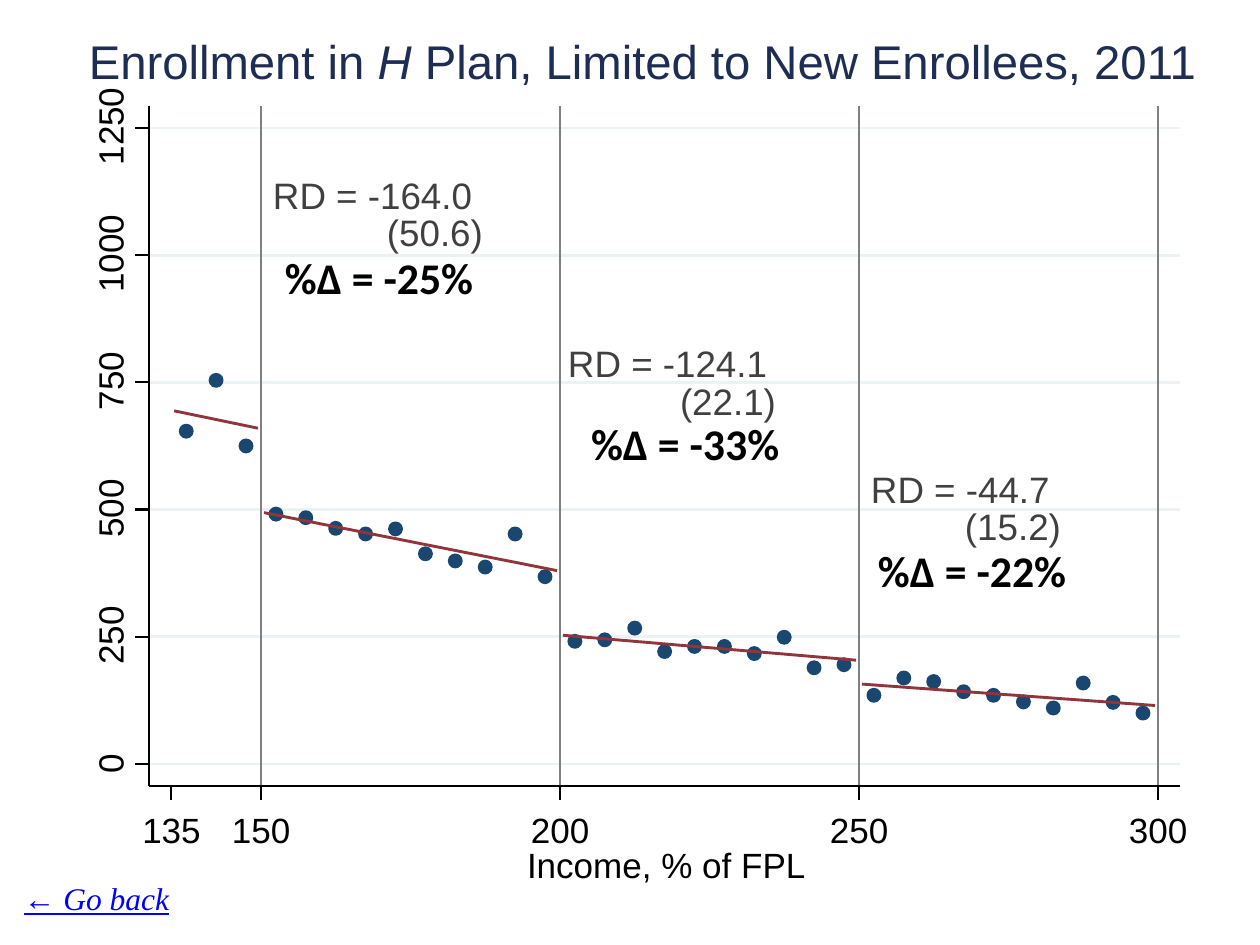
from dataclasses import dataclass

import lxml.etree
import pptx
import pptx.dml.color
import pptx.enum.shapes
import pptx.enum.text
import pptx.oxml.ns
import pptx.util

ALIGN = pptx.enum.text.PP_ALIGN


@dataclass(frozen=True)
class Theme:
    white: str = "FFFFFF"
    black: str = "000000"
    grid: str = "EAF2F3"
    cut: str = "808080"
    dot: str = "1A476F"
    fit: str = "90353B"
    note: str = "404040"
    title: str = "1E2D53"
    link: str = "0000FF"
    sans: str = "Arial"
    bold: str = "Calibri"
    serif: str = "Times New Roman"
    head: int = 27
    big: int = 25
    mid: int = 21
    tick: int = 20
    small: int = 18
    thin: float = 1.25
    thick: float = 1.63


def px(n):
    return pptx.util.Emu(round(n * 914400 / 126))


def rgb(code):
    return pptx.dml.color.RGBColor.from_string(code)


class Pen:
    def __init__(self, slide, theme):
        self.slide = slide
        self.theme = theme

    def stroke(self, line, color, width):
        line.color.rgb = rgb(color)
        line.width = pptx.util.Pt(width)

    def line(self, x1, y1, x2, y2, color, width):
        kind = pptx.enum.shapes.MSO_CONNECTOR.STRAIGHT
        line = self.slide.shapes.add_connector(kind, px(x1), px(y1), px(x2), px(y2))
        self.stroke(line.line, color, width)
        lxml.etree.SubElement(line.element.spPr, pptx.oxml.ns.qn("a:effectLst"))

    def shape(self, kind, box, color, width):
        shape = self.slide.shapes.add_shape(kind, *map(px, box))
        shape.shadow.inherit = False
        shape.fill.solid()
        shape.fill.fore_color.rgb = rgb(color)
        self.stroke(shape.line, color, width)

    def curve(self, points, color, width):
        spots = [(px(x), px(y)) for x, y in points]
        path = self.slide.shapes.build_freeform(*spots[0])
        path.add_line_segments(spots[1:], close=False)
        shape = path.convert_to_shape()
        shape.shadow.inherit = False
        shape.fill.background()
        self.stroke(shape.line, color, width)

    def run(self, para, text, size, color, face, bold=False, slant=False, under=False):
        run = para.add_run()
        run.text = text
        font = run.font
        font.size = pptx.util.Pt(size)
        font.color.rgb = rgb(color)
        font.name = face
        font.bold, font.italic, font.underline = bold, slant, under

    def frame(self, shape, align):
        frame = shape.text_frame
        frame.word_wrap = True
        frame.auto_size = pptx.enum.text.MSO_AUTO_SIZE.NONE
        frame.vertical_anchor = pptx.enum.text.MSO_ANCHOR.TOP
        frame.margin_left = frame.margin_right = 0
        frame.margin_top = frame.margin_bottom = 0
        para = frame.paragraphs[0]
        para.alignment = align
        return para

    def text(self, box, text, size, color, face, align=ALIGN.LEFT, host=None, turn=0, **look):
        shape = (host or self.slide).shapes.add_textbox(*map(px, box))
        shape.rotation = turn
        self.run(self.frame(shape, align), text, size, color, face, **look)

    def title(self, box, parts):
        shape = self.slide.shapes.title
        shape.left, shape.top, shape.width, shape.height = map(px, box)
        para = self.frame(shape, ALIGN.CENTER)
        for text, slant in parts:
            self.run(para, text, self.theme.head, self.theme.title, self.theme.sans, slant=slant)


LEFT, TOP, RIGHT, BASE, TICK = 149, 106, 1180, 786, 14
CUTS = [150, 200, 250, 300]
STEPS = range(0, 1251, 250)
DOTS = [
    654, 754, 625,
    491, 484, 463, 452, 462, 413, 399, 387, 452, 368,
    241, 244, 267, 221, 231, 231, 217, 249, 189, 195,
    135, 169, 162, 142, 135, 122, 110, 159, 121, 100,
]
FITS = [
    (135.5, 149.5, 694, 660),
    (150.5, 199.5, 494, 380),
    (200.5, 249.5, 253, 204),
    (250.5, 299.5, 157, 115),
]
NOTES = [
    ("RD = -164.0", (273, 173), "(50.6)", (285, 210), "%Δ = -25%", (285, 251)),
    ("RD = -124.1", (568, 341), "(22.1)", (578, 379), "%Δ = -33%", (591, 417)),
    ("RD = -44.7", (871, 467), "(15.2)", (863, 504), "%Δ = -22%", (878, 544)),
]


def across(income):
    return 261 + (income - 150) * 5.98


def up(count):
    return 764 - count * 0.5088


def plot(pen, theme):
    kinds = pptx.enum.shapes.MSO_SHAPE
    pen.shape(kinds.RECTANGLE, (LEFT, TOP, RIGHT - LEFT, BASE - TOP), theme.white, theme.thin)
    for step in STEPS:
        pen.line(LEFT, up(step), RIGHT, up(step), theme.grid, theme.thick)
    for cut in CUTS:
        pen.line(across(cut), BASE, across(cut), TOP, theme.cut, theme.thick)
    for i, count in enumerate(DOTS):
        box = (across(137.5 + 5 * i) - 6, up(count) - 6, 12, 12)
        pen.shape(kinds.OVAL, box, theme.dot, theme.thick)
    for start, end, high, low in FITS:
        span = int(end - start)
        points = [
            (across(start + i), up(high + (low - high) * i / span))
            for i in range(span + 1)
        ]
        pen.curve(points, theme.fit, theme.thick)


def axes(pen, theme):
    label = (theme.tick, theme.black, theme.sans)
    ink = (theme.black, theme.thin)
    pen.line(LEFT, BASE, LEFT, TOP, *ink)
    for step in STEPS:
        y = up(step)
        wide = 16 + 19 * len(str(step))
        pen.line(LEFT, y, LEFT - TICK, y, *ink)
        pen.text((111 - wide / 2, y - 31, wide, 45), str(step), *label, turn=270)
    pen.line(LEFT, BASE, RIGHT, BASE, *ink)
    for income in [135] + CUTS:
        x = across(income)
        pen.line(x, BASE, x, BASE + TICK, *ink)
        pen.text((x - 29, 808, 74, 45), str(income), *label)
    pen.text((527, 843, 293, 45), "Income, % of FPL", *label)


def notes(pen, theme):
    plain = (theme.mid, theme.note, theme.sans)
    strong = (theme.big, theme.black, theme.bold)
    for jump, spot, error, below, share, last in NOTES:
        group = pen.slide.shapes.add_group_shape()
        pen.text((*spot, 205, 45), jump, *plain, host=group)
        pen.text((*below, 198, 44), error, *plain, align=ALIGN.RIGHT, host=group)
        pen.text((*last, 194, 53), share, *strong, host=group, bold=True)


def main():
    theme = Theme()
    deck = pptx.Presentation()
    deck.slide_width, deck.slide_height = px(1260), px(945)
    pen = Pen(deck.slides.add_slide(deck.slide_layouts[5]), theme)
    plot(pen, theme)
    axes(pen, theme)
    notes(pen, theme)
    pen.title((87, 32, 1111, 57), [
        ("Enrollment in ", False),
        ("H", True),
        (" Plan, Limited to New Enrollees, 2011", False),
    ])
    pen.text((24, 879, 165, 38), "← Go back", theme.small, theme.link, theme.serif,
             slant=True, under=True)
    deck.save("out.pptx")


if __name__ == "__main__":
    main()
